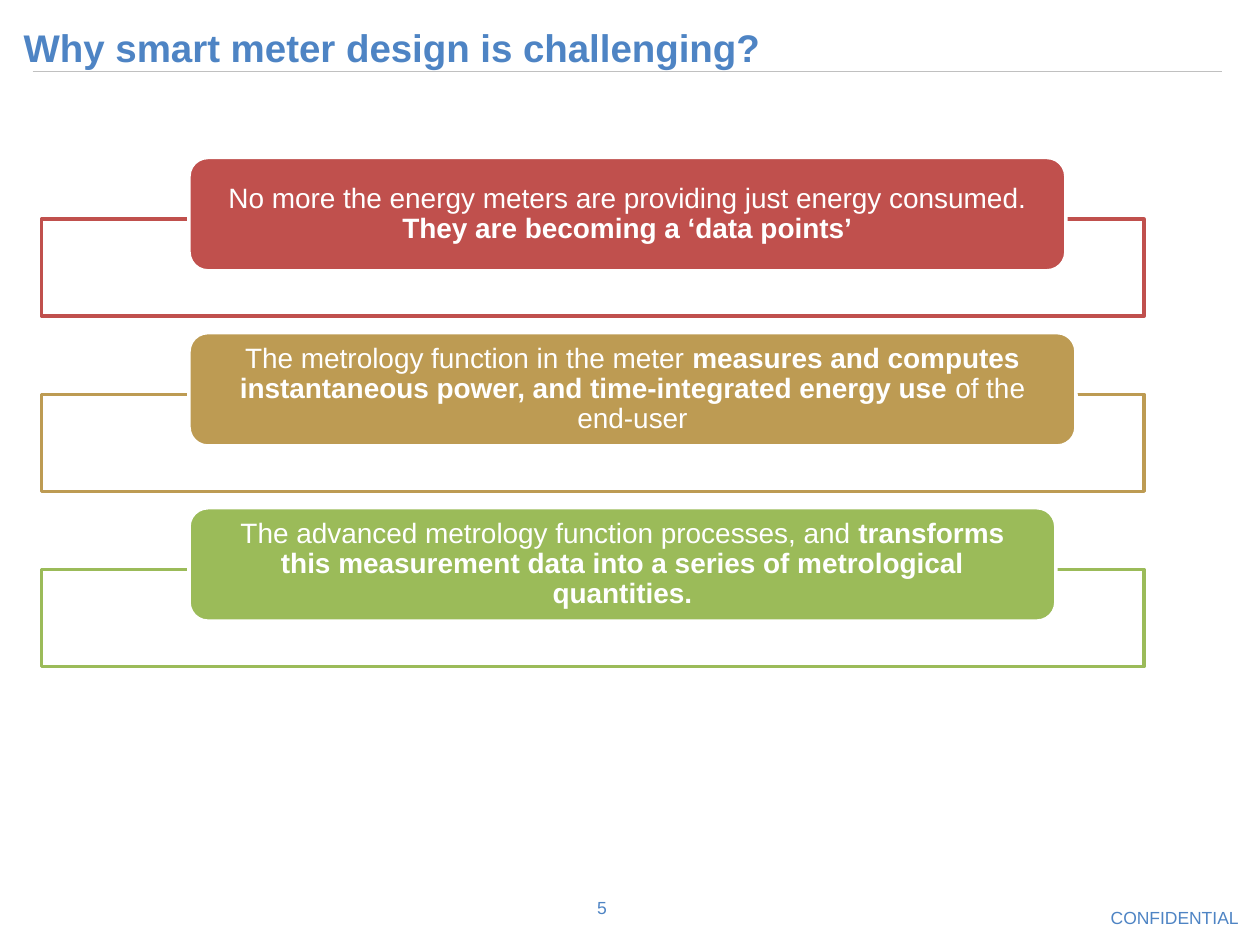
from lxml.etree import SubElement
from pptx import Presentation
from pptx.dml.color import RGBColor
from pptx.enum.shapes import MSO_CONNECTOR, MSO_SHAPE
from pptx.enum.text import MSO_ANCHOR, PP_ALIGN
from pptx.oxml.ns import qn
from pptx.util import Inches, Pt

COLORS = {
    "white": "FFFFFF",
    "blue": "4E84C4",
    "rule": "C0C0C0",
    "red": "C0504D",
    "gold": "BD9B53",
    "green": "9BBB59",
}

# Colour, banner width, runs as (text, bold)
CHALLENGES = [
    ("red", 6.96, [
        ("No more the energy meters are providing just energy consumed. ", False),
        ("They are becoming a ‘data points’", True),
    ]),
    ("gold", 7.04, [
        ("The metrology function in the meter ", False),
        ("measures and computes instantaneous power, "
         "and time-integrated energy use ", True),
        ("of the end-user", False),
    ]),
    ("green", 6.88, [
        ("The advanced metrology function processes, and ", False),
        ("transforms this measurement data into a series of "
         "metrological quantities.", True),
    ]),
]
FIRST_TOP = 1.25
PITCH = 1.39
FRAME_DROP = 0.49


def rgb(name):
    return RGBColor.from_string(COLORS[name])


def set_font(paragraph, size, color):
    font = paragraph.font
    font.name = "Arial"
    font.size = Pt(size)
    font.color.rgb = rgb(color)


def add_label(slide, box, text, size, align=PP_ALIGN.LEFT,
              anchor=MSO_ANCHOR.TOP, inset=None):
    """Add a blue one-paragraph text box and return its paragraph."""
    frame = slide.shapes.add_textbox(*map(Inches, box)).text_frame
    frame.word_wrap = True
    frame.vertical_anchor = anchor
    if inset is not None:
        frame.margin_left = frame.margin_right = Inches(inset)
        frame.margin_top = frame.margin_bottom = Inches(inset)
    paragraph = frame.paragraphs[0]
    paragraph.text = text
    paragraph.alignment = align
    set_font(paragraph, size, "blue")
    return paragraph


def add_rule(slide, left, right, y):
    rule = slide.shapes.add_connector(
        MSO_CONNECTOR.STRAIGHT, Inches(left), Inches(y), Inches(right), Inches(y))
    rule.line.color.rgb = rgb("rule")
    rule.line.width = Pt(0.75)
    SubElement(rule._element.spPr, qn("a:effectLst"))


def add_panel(slide, preset, box, fill, line):
    panel = slide.shapes.add_shape(preset, *map(Inches, box))
    panel.shadow.inherit = False
    panel.fill.solid()
    panel.fill.fore_color.rgb = rgb(fill)
    panel.line.color.rgb = rgb(line)
    panel.line.width = Pt(2)
    return panel


def add_challenge(slide, top, color, width, runs):
    """Add an outlined frame with a filled banner over its upper edge."""
    frame = add_panel(slide, MSO_SHAPE.RECTANGLE,
                      (0.33, top + FRAME_DROP, 8.75, 0.77), "white", color)
    fill_color = frame._element.spPr.find(qn("a:solidFill"))[0]
    SubElement(fill_color, qn("a:alpha"), val="90000")

    banner = add_panel(slide, MSO_SHAPE.ROUNDED_RECTANGLE,
                       (1.5, top, width, 0.9), color, "white")
    body = banner.text_frame
    body.word_wrap = True
    body.vertical_anchor = MSO_ANCHOR.MIDDLE
    body.margin_left = body.margin_right = Inches(0.19)
    body.margin_top = body.margin_bottom = 0
    paragraph = body.paragraphs[0]
    paragraph.alignment = PP_ALIGN.CENTER
    paragraph.line_spacing = 0.9
    set_font(paragraph, 16, "white")
    for text, bold in runs:
        run = paragraph.add_run()
        run.text = text
        run.font.bold = bold


def main():
    deck = Presentation()
    deck.slide_width = Inches(10)
    deck.slide_height = Inches(7.5)
    slide = deck.slides.add_slide(deck.slide_layouts[6])

    add_rule(slide, 0.26, 9.7, 0.57)
    add_label(slide, (5.57, 7.2, 4.26, 0.17), "CONFIDENTIAL", 10,
              align=PP_ALIGN.RIGHT, inset=0)
    title = add_label(slide, (0.09, 0.09, 9.57, 0.49),
                      "Why smart meter design is challenging?", 22)
    title.font.bold = True
    title.line_spacing = 1.15
    add_label(slide, (4.64, 7.01, 0.73, 0.39), "5", 10, anchor=MSO_ANCHOR.MIDDLE)

    for row, (color, width, runs) in enumerate(CHALLENGES):
        add_challenge(slide, FIRST_TOP + row * PITCH, color, width, runs)

    deck.save("out.pptx")


if __name__ == "__main__":
    main()
